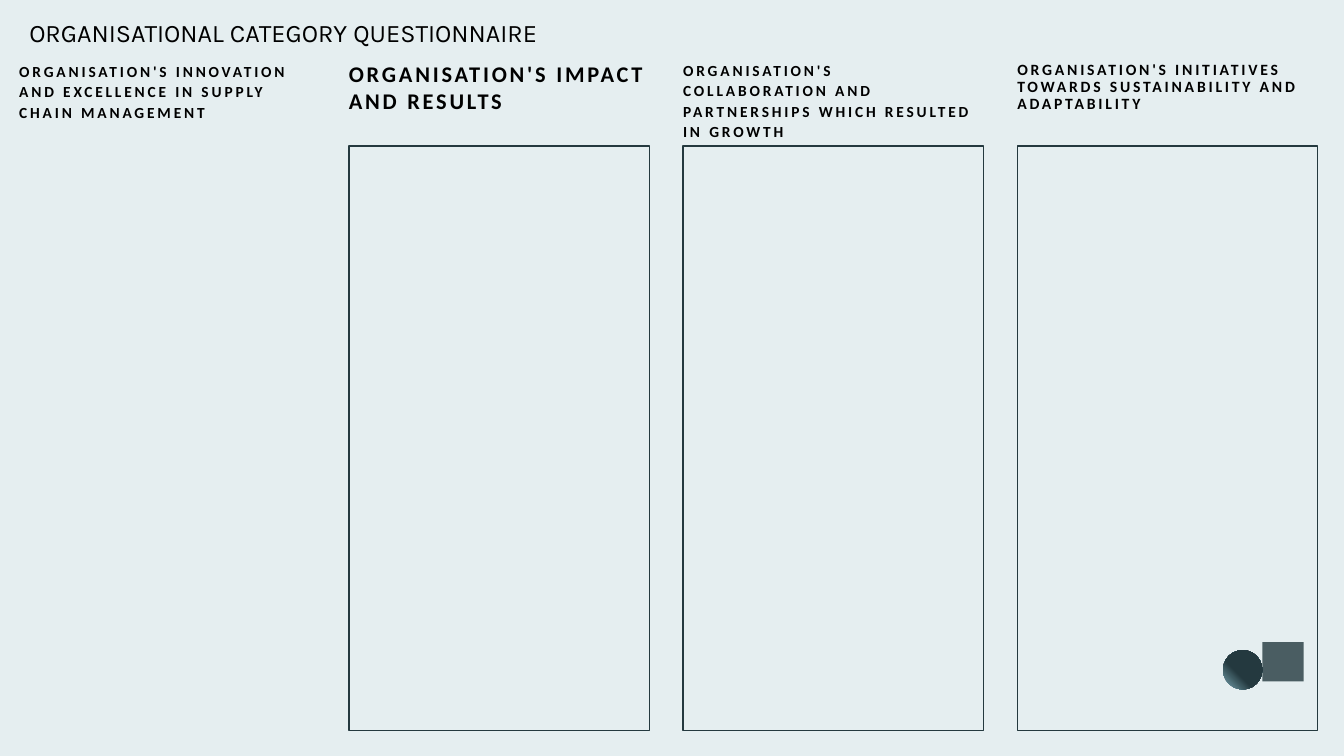
from dataclasses import dataclass

import pptx
import pptx.dml.color
import pptx.enum.shapes
import pptx.enum.text
import pptx.oxml
import pptx.oxml.ns
import pptx.presentation
import pptx.shapes.autoshape
import pptx.slide
import pptx.util

Inches = pptx.util.Inches
Pt = pptx.util.Pt
RGBColor = pptx.dml.color.RGBColor
MSO_SHAPE = pptx.enum.shapes.MSO_SHAPE

MIST = RGBColor(0xE5, 0xEE, 0xF0)
DEEP_TEAL = RGBColor(0x24, 0x39, 0x3F)
PALE_TEAL = RGBColor(0x7C, 0xA8, 0xB4)
BLACK = RGBColor(0, 0, 0)

FIRST_LEFT = 0.19
COLUMN_PITCH = 3.3
PANEL_FIRST_LEFT = 3.46
PANEL_PITCH = 3.315
HEADING_WIDTH = 2.99
HEADING_HEIGHT = 0.54

RADIAL_FILL = (
    '<a:gradFill %s rotWithShape="1"><a:gsLst>'
    '<a:gs pos="60000"><a:srgbClr val="%s"/></a:gs>'
    '<a:gs pos="100000"><a:srgbClr val="%s"/></a:gs></a:gsLst>'
    '<a:path path="circle"><a:fillToRect l="100000" b="100000"/></a:path>'
    '</a:gradFill>'
)


@dataclass(frozen=True)
class Column:
    heading: str
    top: float
    size: float
    line_spacing: float
    has_panel: bool = True


COLUMNS = [
    Column("ORGANISATION'S INNOVATION AND EXCELLENCE IN SUPPLY CHAIN MANAGEMENT",
           0.6, 11, 1.1, has_panel=False),
    Column("ORGANISATION'S IMPACT AND RESULTS", 0.6, 16, 1.0),
    Column("ORGANISATION'S COLLABORATION AND PARTNERSHIPS WHICH RESULTED IN GROWTH",
           0.59, 11, 1.1),
    Column("ORGANISATION'S INITIATIVES TOWARDS SUSTAINABILITY AND ADAPTABILITY",
           0.62, 11.2, 0.9),
]


def add_plain_shape(slide: pptx.slide.Slide, kind: MSO_SHAPE, left: float, top: float,
                    width: float, height: float) -> pptx.shapes.autoshape.Shape:
    shape = slide.shapes.add_shape(
        kind, Inches(left), Inches(top), Inches(width), Inches(height))
    shape.shadow.inherit = False
    return shape


def add_corner_ornament(slide: pptx.slide.Slide) -> None:
    disc = add_plain_shape(slide, MSO_SHAPE.OVAL, 12.13, 6.45, 0.39, 0.39)
    disc.line.fill.background()
    disc.fill.gradient()
    default_fill = disc._element.spPr.find(pptx.oxml.ns.qn("a:gradFill"))
    radial_fill = pptx.oxml.parse_xml(
        RADIAL_FILL % (pptx.oxml.ns.nsdecls("a"), DEEP_TEAL, PALE_TEAL))
    disc._element.spPr.replace(default_fill, radial_fill)

    tile = add_plain_shape(slide, MSO_SHAPE.RECTANGLE, 12.52, 6.37, 0.41, 0.39)
    tile.line.fill.background()
    tile.fill.solid()
    tile.fill.fore_color.rgb = DEEP_TEAL
    tint = tile._element.spPr.find(".//" + pptx.oxml.ns.qn("a:srgbClr"))
    tint.append(pptx.oxml.parse_xml(
        '<a:alpha %s val="80000"/>' % pptx.oxml.ns.nsdecls("a")))


def add_heading(slide: pptx.slide.Slide, column: Column, left: float) -> None:
    heading = slide.shapes.add_textbox(
        Inches(left), Inches(column.top), Inches(HEADING_WIDTH), Inches(HEADING_HEIGHT))
    frame = heading.text_frame
    frame.word_wrap = True
    frame.margin_left = frame.margin_right = 0
    frame.margin_top = frame.margin_bottom = 0
    frame.text = column.heading
    paragraph = frame.paragraphs[0]
    paragraph.line_spacing = column.line_spacing
    paragraph.space_after = Pt(8)
    run = paragraph.runs[0]
    run.font.name = "Calibri"
    run.font.size = Pt(column.size)
    run.font.bold = True
    run.font.color.rgb = BLACK
    run._r.get_or_add_rPr().set("spc", "200")


def add_panel(slide: pptx.slide.Slide, left: float) -> None:
    panel = add_plain_shape(slide, MSO_SHAPE.RECTANGLE, left, 1.45, 2.98, 5.8)
    panel.fill.background()
    panel.line.color.rgb = DEEP_TEAL
    panel.line.width = Pt(1)


def format_title(slide: pptx.slide.Slide) -> None:
    title = slide.shapes.title
    title.left, title.top = Inches(FIRST_LEFT), Inches(0.12)
    title.width, title.height = Inches(12.88), Inches(0.4)
    frame = title.text_frame
    frame.text = "ORGANISATIONAL CATEGORY QUESTIONNAIRE"
    frame.word_wrap = True
    frame.auto_size = pptx.enum.text.MSO_AUTO_SIZE.SHAPE_TO_FIT_TEXT
    frame.vertical_anchor = pptx.enum.text.MSO_ANCHOR.TOP
    paragraph = frame.paragraphs[0]
    paragraph.alignment = pptx.enum.text.PP_ALIGN.LEFT
    font = paragraph.runs[0].font
    font.name = "Karla"
    font.size = Pt(18)
    font.color.rgb = BLACK


def main() -> None:
    deck: pptx.presentation.Presentation = pptx.Presentation()
    deck.slide_width, deck.slide_height = Inches(13.33), Inches(7.5)
    slide = deck.slides.add_slide(deck.slide_layouts[5])
    slide.background.fill.solid()
    slide.background.fill.fore_color.rgb = MIST

    format_title(slide)
    add_corner_ornament(slide)
    for index, column in enumerate(COLUMNS):
        left = FIRST_LEFT
        if column.has_panel:
            left = PANEL_FIRST_LEFT + (index - 1) * PANEL_PITCH
            add_panel(slide, left)
        add_heading(slide, column, left)

    deck.save("out.pptx")


if __name__ == "__main__":
    main()
